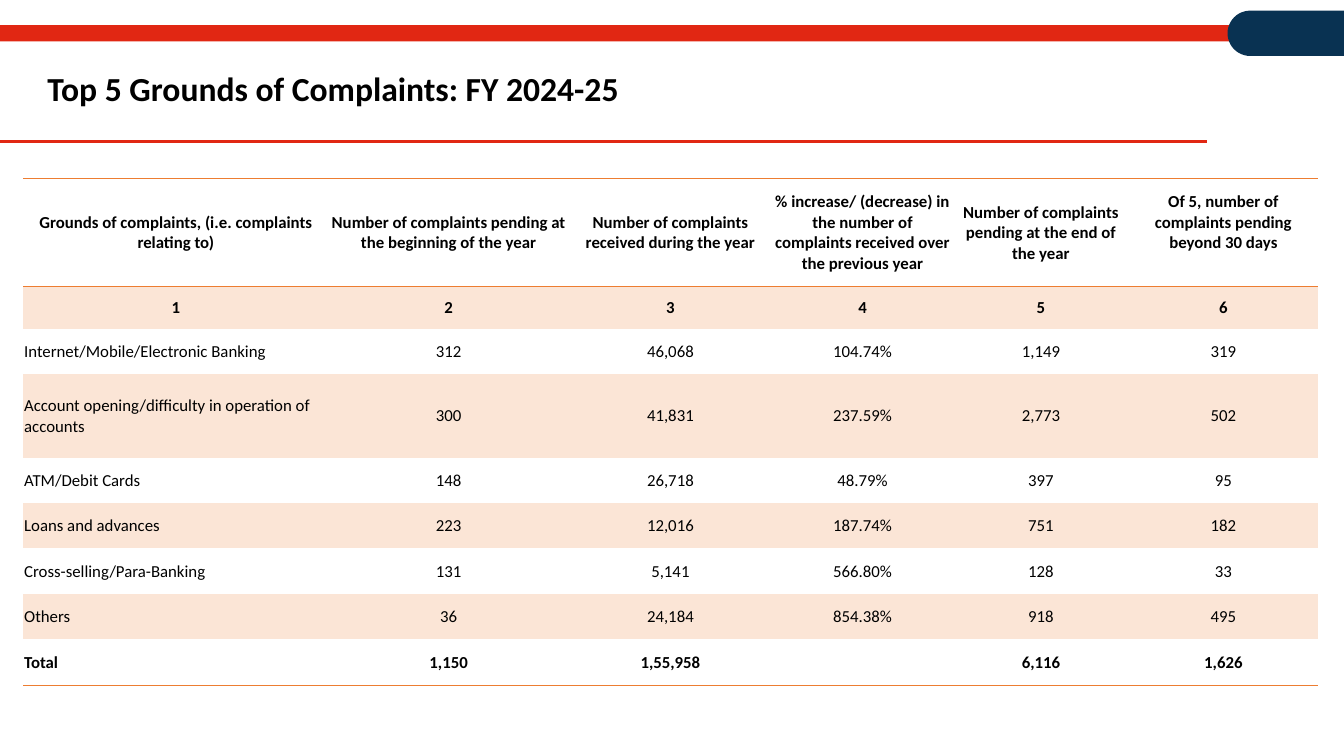
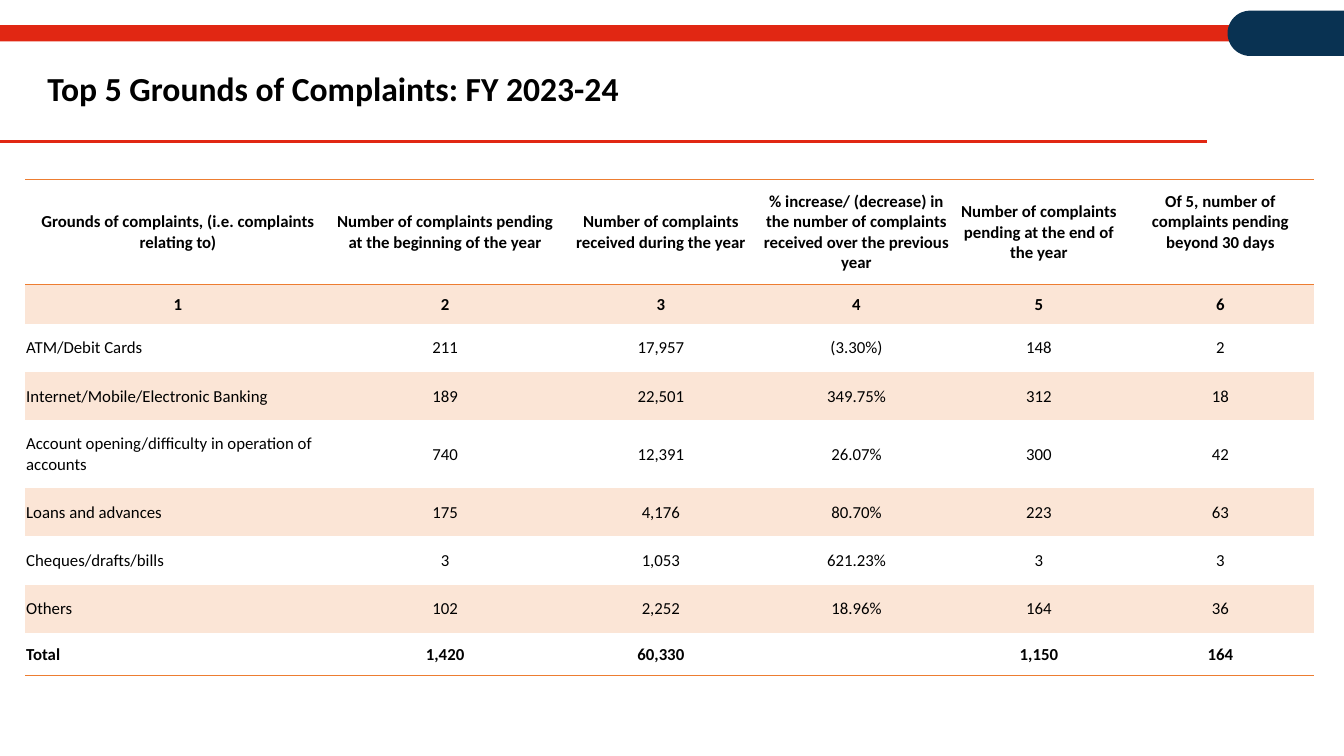
from pptx import Presentation
from pptx.dml.color import RGBColor
from pptx.enum.shapes import MSO_CONNECTOR, MSO_SHAPE
from pptx.enum.text import MSO_ANCHOR, MSO_AUTO_SIZE, PP_ALIGN
from pptx.oxml import parse_xml
from pptx.oxml.ns import nsdecls, qn
from pptx.util import Inches, Pt

COLORS = {
    "red": "E12713",
    "navy": "093252",
    "orange": "ED7D31",
    "peach": "FBE5D6",
    "black": "000000",
}
NO_STYLE = "{2D5ABB26-0587-4C30-8999-92F81FD0307C}"
HEADERS = [
    "Grounds of complaints, (i.e. complaints relating to)",
    "Number of complaints pending at the beginning of the year",
    "Number of complaints received during the year",
    "% increase/ (decrease) in the number of complaints received over the previous year",
    "Number of complaints pending at the end of the year",
    "Of 5, number of complaints pending beyond 30 days",
]
NUMBERS = ["1", "2", "3", "4", "5", "6"]

YEARS = [
    {
        "title": "Top 5 Grounds of Complaints: FY 2024-25",
        "at": (0.23, 1.77),
        "cols": [3.03, 2.38, 2.02, 1.79, 1.75, 1.87],
        "heights": [1.07, 0.42, 0.45, 0.83, 0.45, 0.45, 0.45, 0.45, 0.46],
        "rows": [
            ["Internet/Mobile/Electronic Banking", "312", "46,068", "104.74%", "1,149", "319"],
            ["Account opening/difficulty in operation of accounts", "300", "41,831", "237.59%", "2,773", "502"],
            ["ATM/Debit Cards", "148", "26,718", "48.79%", "397", "95"],
            ["Loans and advances", "223", "12,016", "187.74%", "751", "182"],
            ["Cross-selling/Para-Banking", "131", "5,141", "566.80%", "128", "33"],
            ["Others", "36", "24,184", "854.38%", "918", "495"],
            ["Total", "1,150", "1,55,958", "", "6,116", "1,626"],
        ],
    },
    {
        "title": "Top 5 Grounds of Complaints: FY 2023-24",
        "at": (0.25, 1.78),
        "cols": [3.03, 2.27, 2.01, 1.87, 1.75, 1.85],
        "heights": [1.04, 0.39, 0.48, 0.48, 0.67, 0.48, 0.48, 0.48, 0.42],
        "rows": [
            ["ATM/Debit Cards", "211", "17,957", "(3.30%)", "148", "2"],
            ["Internet/Mobile/Electronic Banking", "189", "22,501", "349.75%", "312", "18"],
            ["Account opening/difficulty in operation of accounts", "740", "12,391", "26.07%", "300", "42"],
            ["Loans and advances", "175", "4,176", "80.70%", "223", "63"],
            ["Cheques/drafts/bills", "3", "1,053", "621.23%", "3", "3"],
            ["Others", "102", "2,252", "18.96%", "164", "36"],
            ["Total", "1,420", "60,330", "", "1,150", "164"],
        ],
    },
]


def set_font(p, size, bold):
    p.font.name = "Calibri"
    p.font.size = Pt(size)
    p.font.bold = bold
    p.font.color.rgb = RGBColor.from_string(COLORS["black"])


def add_border(cell, side):
    cell._tc.get_or_add_tcPr().append(parse_xml(
        f'<a:{side} {nsdecls("a")} w="12700"><a:solidFill>'
        f'<a:srgbClr val="{COLORS["orange"]}"/></a:solidFill></a:{side}>'))


prs = Presentation()
prs.slide_width = Inches(13.33)
prs.slide_height = Inches(7.5)

layout = prs.slide_layouts[5]
for ph in list(layout.placeholders):
    if ph.placeholder_format.idx:
        ph.element.getparent().remove(ph.element)
    else:
        ph.left, ph.top = Inches(0.37), Inches(0.48)
        ph.width, ph.height = Inches(11.6), Inches(0.83)

slides = [prs.slides.add_slide(layout) for _ in YEARS]

shapes = slides[0].shapes
for x, y, w, h, angle, color in [
    (6.11, -5.86, 0.16, 12.38, 90, "red"),
    (12.53, -0.25, 0.45, 1.16, 270, "navy"),
]:
    sp = shapes.add_shape(MSO_SHAPE.ROUND_2_SAME_RECTANGLE,
                          Inches(x), Inches(y), Inches(w), Inches(h))
    sp.adjustments[0] = 0.5
    sp.adjustments[1] = 0
    sp.rotation = angle
    sp.shadow.inherit = False
    sp.fill.solid()
    sp.fill.fore_color.rgb = RGBColor.from_string(COLORS[color])
    sp.line.fill.background()
    layout.shapes.element.append(sp.element)

rule = shapes.add_connector(MSO_CONNECTOR.STRAIGHT,
                            0, Inches(1.4), Inches(11.97), Inches(1.4))
rule.line.color.rgb = RGBColor.from_string(COLORS["red"])
rule.line.width = Pt(2.25)
rule.element.spPr.append(parse_xml(f'<a:effectLst {nsdecls("a")}/>'))
layout.shapes.element.append(rule.element)

for s, year in zip(slides, YEARS):
    tf = s.shapes.title.text_frame
    tf.text = year["title"]
    tf.auto_size = MSO_AUTO_SIZE.NONE
    tf.vertical_anchor = MSO_ANCHOR.MIDDLE
    p = tf.paragraphs[0]
    p.alignment = PP_ALIGN.LEFT
    p.line_spacing = 0.9
    set_font(p, 24, True)

    rows = [HEADERS, NUMBERS] + year["rows"]
    last = len(rows) - 1
    x, y = year["at"]
    frame = s.shapes.add_table(len(rows), len(HEADERS), Inches(x), Inches(y),
                               Inches(sum(year["cols"])), Inches(sum(year["heights"])))
    frame.element.find(".//" + qn("a:tableStyleId")).text = NO_STYLE
    table = frame.table
    table.first_row = table.horz_banding = False
    for col, width in zip(table.columns, year["cols"]):
        col.width = Inches(width)
    for row, height in zip(table.rows, year["heights"]):
        row.height = Inches(height)

    for i, values in enumerate(rows):
        for j, value in enumerate(values):
            cell = table.cell(i, j)
            cell.text = value
            cell.vertical_anchor = MSO_ANCHOR.MIDDLE
            cell.margin_left = cell.margin_top = cell.margin_right = Inches(0.01)
            cell.margin_bottom = Inches(0.2 if i == 0 and j == 5 else 0)
            p = cell.text_frame.paragraphs[0]
            p.alignment = PP_ALIGN.LEFT if i > 1 and j == 0 else PP_ALIGN.CENTER
            set_font(p, 12, i in (0, 1, last))
            if i == 0:
                add_border(cell, "lnT")
            if i in (0, last):
                add_border(cell, "lnB")
            if i % 2:
                cell.fill.solid()
                cell.fill.fore_color.rgb = RGBColor.from_string(COLORS["peach"])
            else:
                cell.fill.background()

prs.save("out.pptx")
